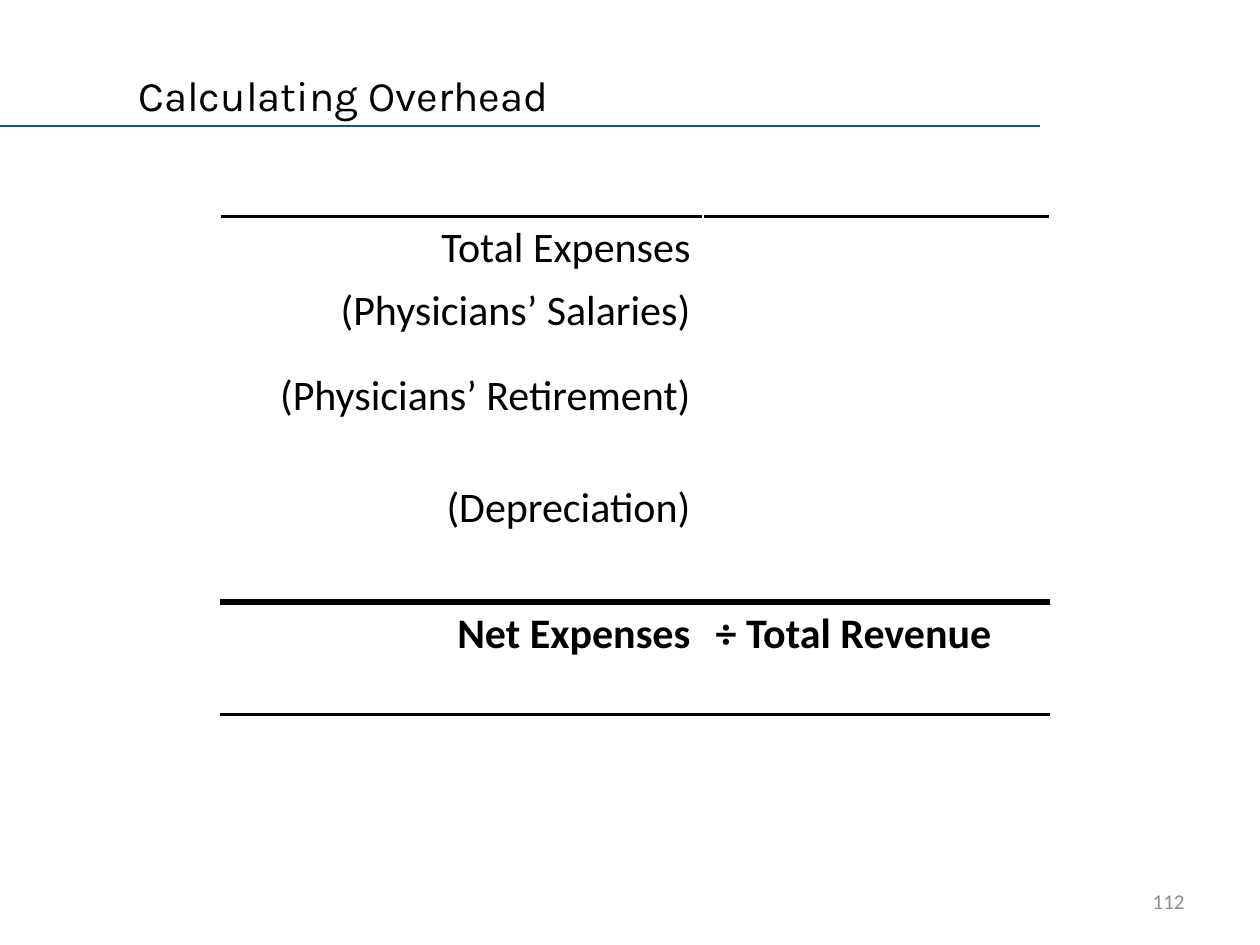
from lxml.etree import SubElement
from pptx import Presentation
from pptx.dml.color import RGBColor
from pptx.enum.shapes import MSO_CONNECTOR
from pptx.enum.text import MSO_ANCHOR, PP_ALIGN
from pptx.oxml.ns import qn
from pptx.util import Inches, Pt

BLACK = RGBColor(0x00, 0x00, 0x00)
WHITE = RGBColor(0xFF, 0xFF, 0xFF)
BLUE = RGBColor(0x00, 0x5B, 0x99)
GRAY = RGBColor(0x8C, 0x8C, 0x8C)

TITLE = "Calculating Overhead"
PAGE = "112"
ROWS = [
    ("Total Expenses", ""),
    ("(Physicians’ Salaries)", ""),
    ("(Physicians’ Retirement)", ""),
    ("(Depreciation)", ""),
    ("", ""),
    ("Net Expenses", "÷ Total Revenue"),
]
COL_WIDTHS = [3.83, 2.75]
ROW_HEIGHTS = [0.5, 0.67, 0.89, 0.5, 0.5, 0.89]
ALIGNS = [PP_ALIGN.RIGHT, PP_ALIGN.LEFT]
LAST = len(ROWS) - 1
RULES = {0: {"a:lnT": 2}, LAST - 1: {"a:lnB": 4}, LAST: {"a:lnT": 4, "a:lnB": 2}}


def set_text(tf, text, size, font, color, align=PP_ALIGN.LEFT, bold=False):
    p = tf.paragraphs[0]
    p.alignment = align
    p.font.size = Pt(size)
    p.font.name = font
    p.font.bold = bold
    p.font.color.rgb = color
    if text:
        p.add_run().text = text


def add_text(slide, box, *style):
    tf = slide.shapes.add_textbox(*map(Inches, box)).text_frame
    tf.word_wrap = True
    tf.vertical_anchor = MSO_ANCHOR.MIDDLE
    set_text(tf, *style)


def add_border(cell, side, width):
    ln = SubElement(cell._tc.get_or_add_tcPr(), qn(side), w=str(Pt(width)))
    fill = SubElement(ln, qn("a:solidFill"))
    SubElement(fill, qn("a:srgbClr"), val=str(BLACK))


prs = Presentation()
prs.slide_width, prs.slide_height = Inches(10), Inches(7.5)
slide = prs.slides.add_slide(prs.slide_layouts[6])

rule = slide.shapes.add_connector(
    MSO_CONNECTOR.STRAIGHT, 0, Inches(1), Inches(8.25), Inches(1))
rule.line.color.rgb = BLUE
rule.line.width = Pt(0.75)
SubElement(rule._element.spPr, qn("a:effectLst"))

add_text(slide, (1, 0.5, 7, 0.5), TITLE, 24, "Karla", BLACK)

table = slide.shapes.add_table(
    len(ROWS), len(COL_WIDTHS), Inches(1.75), Inches(1.72),
    Inches(sum(COL_WIDTHS)), Inches(sum(ROW_HEIGHTS))).table
table.first_row = table.horz_banding = False
for col, width in zip(table.columns, COL_WIDTHS):
    col.width = Inches(width)
for i, (row, height) in enumerate(zip(table.rows, ROW_HEIGHTS)):
    row.height = Inches(height)
    for cell, text, align in zip(row.cells, ROWS[i], ALIGNS):
        for side, width in RULES.get(i, {}).items():
            add_border(cell, side, width)
        cell.fill.solid()
        cell.fill.fore_color.rgb = WHITE
        set_text(cell.text_frame, text, 24, "Calibri", BLACK, align, i == LAST)

add_text(slide, (7.17, 6.95, 2.33, 0.4), PAGE, 12, "Calibri", GRAY, PP_ALIGN.RIGHT)

prs.save("out.pptx")
